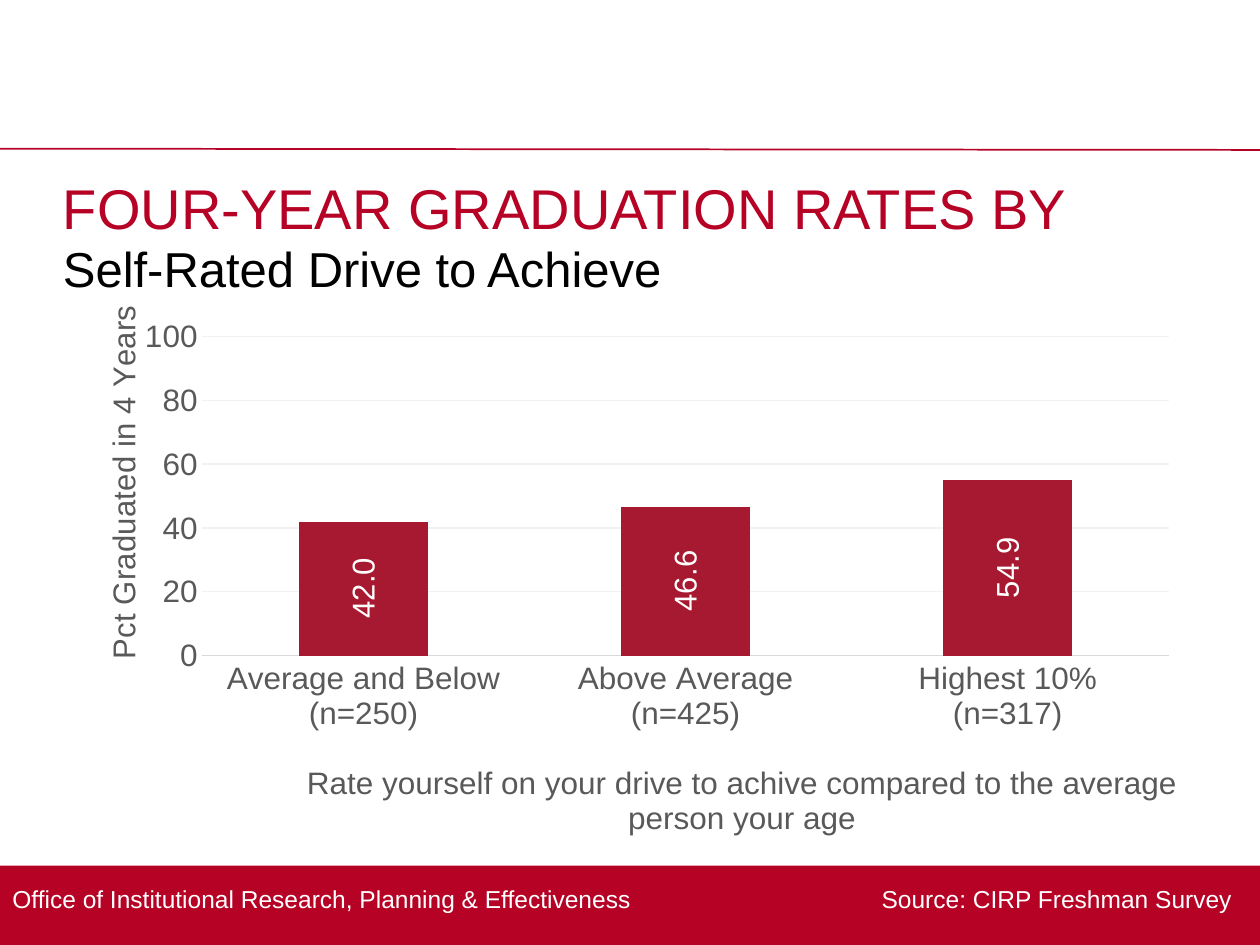
from lxml import etree
from pptx import Presentation
from pptx.chart.data import CategoryChartData
from pptx.dml.color import RGBColor
from pptx.enum.chart import XL_CHART_TYPE as ChartType
from pptx.enum.chart import XL_LABEL_POSITION as LabelPos
from pptx.enum.chart import XL_TICK_MARK as Tick
from pptx.enum.shapes import MSO_CONNECTOR as Connector
from pptx.enum.shapes import MSO_SHAPE as Shape
from pptx.enum.text import MSO_ANCHOR as Anchor
from pptx.oxml.ns import qn
from pptx.util import Inches, Pt

# Content
HEADING = "FOUR-YEAR GRADUATION RATES BY"
SUBHEADING = "Self-Rated Drive to Achieve"
FOOTER = ("Office of Institutional Research, Planning & Effectiveness",
          "Source: CIRP Freshman Survey")
RATES = [
    ("Average and Below\n(n=250)", 42.0),
    ("Above Average\n(n=425)", 46.6),
    ("Highest 10%\n(n=317)", 54.9),
]
X_TITLE = "Rate yourself on your drive to achive compared to the average person your age"
Y_TITLE = "Pct Graduated in 4 Years"

FONT = "Arial"
RED = RGBColor(0xB6, 0x02, 0x25)
BAR_RED = RGBColor(0xA7, 0x19, 0x30)
BLACK = RGBColor(0, 0, 0)
WHITE = RGBColor(0xFF, 0xFF, 0xFF)
GREY = RGBColor(0x59, 0x59, 0x59)
AXIS_GREY = RGBColor(0xD9, 0xD9, 0xD9)
GRID_GREY = RGBColor(0xF2, 0xF2, 0xF2)

prs = Presentation()
prs.slide_width, prs.slide_height = Inches(10), Inches(7.5)
s = prs.slides.add_slide(prs.slide_layouts[6])


def style(font, size, color):
    font.name, font.size, font.bold = FONT, Pt(size), False
    font.color.rgb = color


def add_text(text, box, size, color, left=0, top=0, anchor=Anchor.TOP):
    tf = s.shapes.add_textbox(*map(Inches, box)).text_frame
    tf.word_wrap = True
    tf.vertical_anchor = anchor
    tf.margin_left, tf.margin_top = Inches(left), Inches(top)
    tf.margin_right = tf.margin_bottom = 0
    tf.text = text
    p = tf.paragraphs[0]
    style(p.runs[0].font, size, color)
    return p


def set_layout(parent, **values):
    """Place a chart part by fractions of the chart's size."""
    layout = parent.find(qn("c:layout"))
    if layout is None:
        layout = etree.Element(qn("c:layout"))
        parent.insert(0, layout)
    manual = etree.SubElement(layout, qn("c:manualLayout"))
    for tag, value in values.items():
        etree.SubElement(manual, qn("c:" + tag)).set("val", str(value))


def set_axis(axis, title, x, y):
    axis.major_tick_mark = axis.minor_tick_mark = Tick.NONE
    style(axis.tick_labels.font, 18, GREY)
    tf = axis.axis_title.text_frame
    tf.text = title
    style(tf.paragraphs[0].runs[0].font, 18, GREY)
    set_layout(axis.axis_title._element, xMode="edge", yMode="edge", x=x, y=y)


# Header rule and footer band
rule = s.shapes.add_connector(Connector.STRAIGHT, 0, Inches(1.18), Inches(10), Inches(1.19))
rule.line.color.rgb = RED
rule.line.width = Pt(1)
etree.SubElement(rule._element.spPr, qn("a:effectLst"))

band = s.shapes.add_shape(Shape.RECTANGLE, 0, Inches(6.87), Inches(10), Inches(0.63))
band.shadow.inherit = False
band.fill.solid()
band.fill.fore_color.rgb = RED
band.line.fill.background()

# Footer text: the source sits at a right-aligned tab
p = add_text("\t".join(FOOTER), (0, 6.88, 10, 0.51), 14, WHITE, left=0.1, anchor=Anchor.MIDDLE)
tabs = etree.SubElement(p._p.get_or_add_pPr(), qn("a:tabLst"))
etree.SubElement(tabs, qn("a:tab"), pos=str(Inches(9.68)), algn="r")

# Headings
add_text(SUBHEADING, (0.5, 1.85, 9, 0.45), 28, BLACK, top=0.04)
add_text(HEADING, (0.5, 1.29, 9, 0.87), 32, RED, top=0.09)

# Chart
data = CategoryChartData(number_format="#,##0.0")
data.categories = [name for name, _ in RATES]
data.add_series("Series 1", [rate for _, rate in RATES])
chart = s.shapes.add_chart(ChartType.COLUMN_CLUSTERED, Inches(0.5), Inches(2.38),
                           Inches(9), Inches(4.33), data).chart
chart.has_legend = chart.has_title = False
style(chart.font, 18, BLACK)
set_layout(chart._chartSpace.chart.plotArea, layoutTarget="inner", xMode="edge",
           yMode="edge", x=0.123, y=0.068, w=0.852, h=0.594)

set_axis(chart.category_axis, X_TITLE, 0.21, 0.85)
axis_line = chart.category_axis.format.line
axis_line.color.rgb, axis_line.width = AXIS_GREY, Pt(0.75)

values = chart.value_axis
set_axis(values, Y_TITLE, 0.03, 0.01)
values.minimum_scale, values.maximum_scale, values.major_unit = 0, 100, 20
values.tick_labels.number_format = "0"
values.tick_labels.number_format_is_linked = False
values.format.line.fill.background()
grid = values.major_gridlines.format.line
grid.color.rgb, grid.width = GRID_GREY, Pt(0.75)

# Bars with upright value labels
plot = chart.plots[0]
plot.gap_width, plot.overlap, plot.vary_by_categories = 150, -27, False
bars = plot.series[0]
bars.format.fill.solid()
bars.format.fill.fore_color.rgb = BAR_RED
labels = bars.data_labels
labels.show_value = True
labels.position = LabelPos.CENTER
labels.number_format, labels.number_format_is_linked = "#,##0.0", False
style(labels.font, 18, WHITE)
body = labels._element.find(".//" + qn("a:bodyPr"))
body.set("rot", "-5400000")
body.set("vert", "horz")

prs.save("out.pptx")
